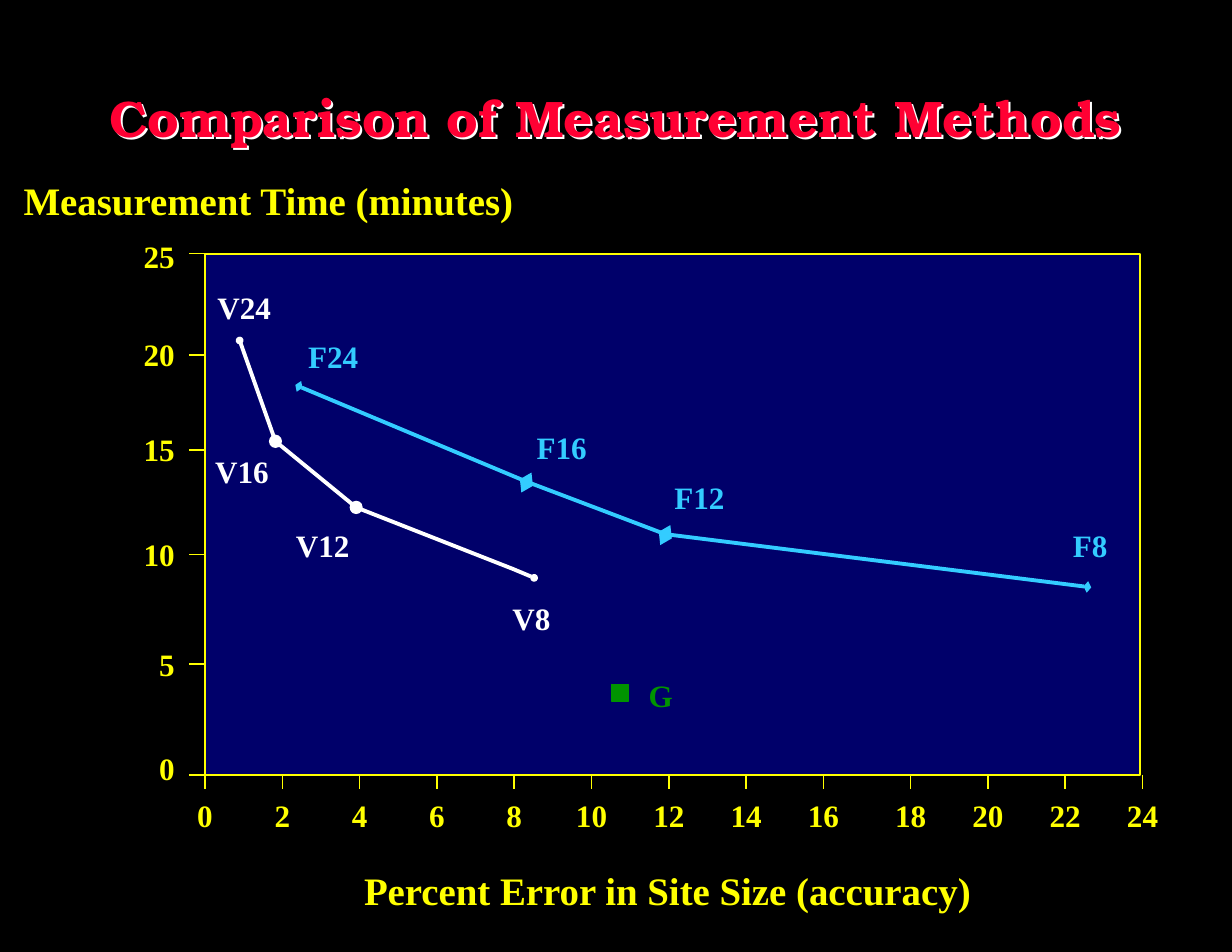
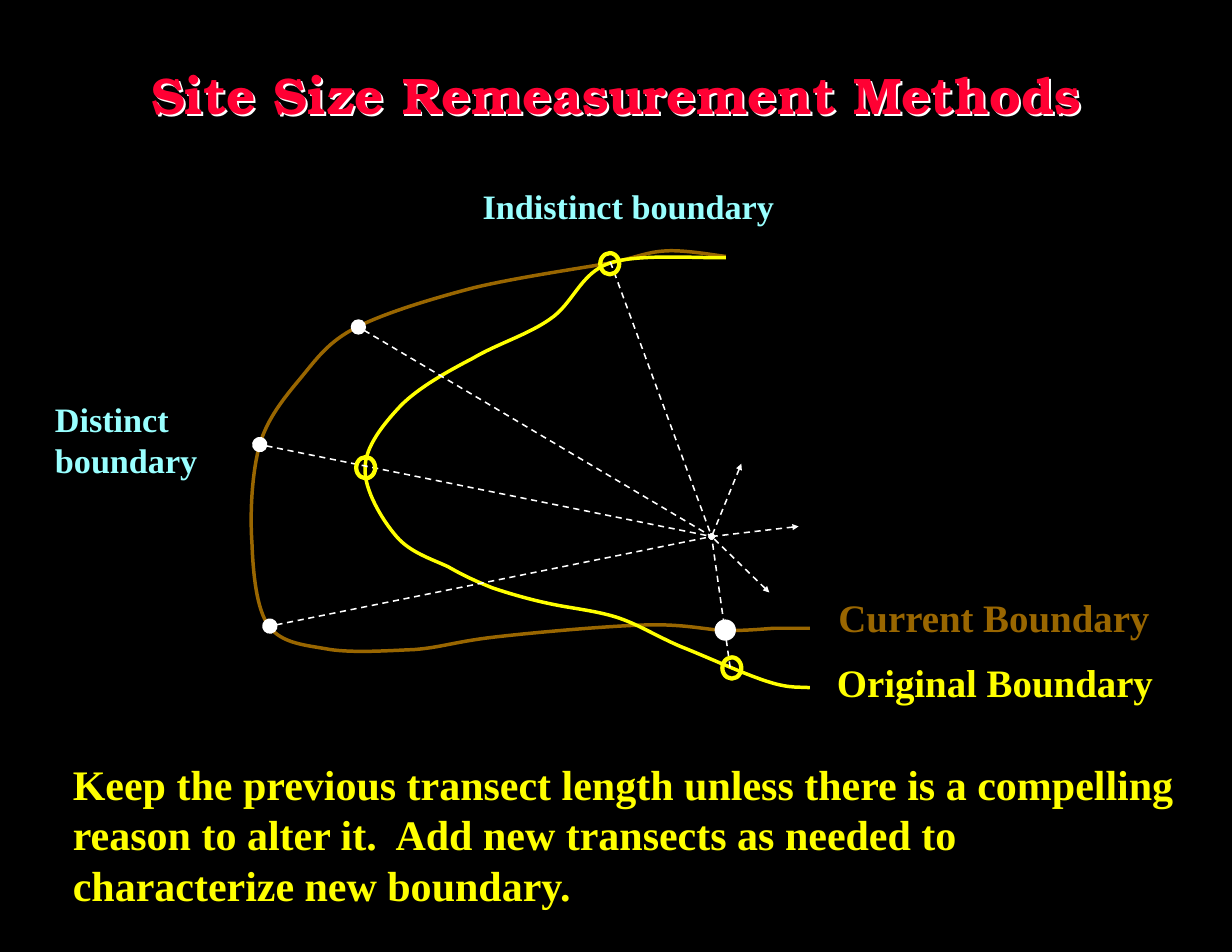
from lxml import etree
from pptx import Presentation
from pptx.dml.color import RGBColor
from pptx.enum.dml import MSO_LINE
from pptx.enum.shapes import MSO_CONNECTOR, MSO_SHAPE
from pptx.enum.text import MSO_ANCHOR, MSO_AUTO_SIZE, PP_ALIGN
from pptx.oxml.ns import qn
from pptx.util import Pt

LEFT, CENTER = PP_ALIGN.LEFT, PP_ALIGN.CENTER
TOP, MIDDLE = MSO_ANCHOR.TOP, MSO_ANCHOR.MIDDLE
GROW, FIXED = MSO_AUTO_SIZE.SHAPE_TO_FIT_TEXT, MSO_AUTO_SIZE.NONE
OVAL, RECT, DIAMOND = MSO_SHAPE.OVAL, MSO_SHAPE.RECTANGLE, MSO_SHAPE.DIAMOND
STRAIGHT, DASH = MSO_CONNECTOR.STRAIGHT, MSO_LINE.DASH

COLORS = {
    "back": "000000", "title": "FF0033", "yellow": "FFFF00", "plot": "00006A",
    "white": "FFFFFF", "sky": "33CCFF", "green": "009300", "brown": "996600",
    "aqua": "99FFFF",
}
BODY = {"name": "Times New Roman", "bold": True}
HEAD = {"name": "TeX Gyre Bonum", "bold": True}
INSETS = {"margin_left": Pt(7.9), "margin_right": Pt(7.9),
          "margin_top": Pt(4.3), "margin_bottom": Pt(4.3)}


def rgb(name):
    return RGBColor.from_string(COLORS[name])


# ---- Shared parts ----
def add_text(slide, text, box, size, color, align=CENTER, wrap=False,
             anchor=TOP, font=BODY):
    sp = slide.shapes.add_textbox(*map(Pt, box))
    tf = sp.text_frame
    tf.text = text
    frame = {**INSETS, "word_wrap": wrap, "vertical_anchor": anchor,
             "auto_size": FIXED if anchor == MIDDLE else GROW}
    for key, value in frame.items():
        setattr(tf, key, value)
    for p in tf.paragraphs:
        p.alignment = align
        for r in p.runs:
            for key, value in {**font, "size": Pt(size)}.items():
                setattr(r.font, key, value)
            r.font.color.rgb = rgb(color)
    return sp


def add_title(slide, text, top):
    sp = add_text(slide, text, (39.6, top, 712.8, 95), 33, "title",
                  wrap=True, anchor=MIDDLE, font=HEAD)
    # The unfilled box casts the shadow of its text
    effects = etree.SubElement(sp._element.spPr, qn("a:effectLst"))
    shadow = etree.SubElement(effects, qn("a:outerShdw"), dist=str(Pt(1.8)),
                              dir="2700000", algn="ctr", rotWithShape="0")
    etree.SubElement(shadow, qn("a:srgbClr"), val=COLORS["white"])


def add_shape(slide, kind, box, fill=None, line=None, width=1, rotation=0):
    sp = slide.shapes.add_shape(kind, *map(Pt, box))
    sp.shadow.inherit = False
    sp.rotation = rotation
    if fill:
        sp.fill.solid()
        sp.fill.fore_color.rgb = rgb(fill)
    else:
        sp.fill.background()
    if line:
        style_line(sp, line, width)
    else:
        sp.line.fill.background()


def style_line(sp, color, width, head=None, tail=None):
    """Head and tail are (type, width, length)."""
    sp.line.color.rgb = rgb(color)
    sp.line.width = Pt(width)
    ln = sp.line._get_or_add_ln()
    for tag, end in (("a:headEnd", head), ("a:tailEnd", tail)):
        if end:
            etree.SubElement(ln, qn(tag), type=end[0], w=end[1], len=end[2])


def add_line(slide, start, end, color, dash=False, head=None, tail=None):
    sp = slide.shapes.add_connector(STRAIGHT, *map(Pt, (*start, *end)))
    if dash:
        sp.line.dash_style = DASH
    style_line(sp, color, 1, head, tail)
    etree.SubElement(sp._element.spPr, qn("a:effectLst"))


def add_outline(slide, points, origin, color, width, end=None, curved=False):
    """Open outline; if curved, each three points after the first make a Bezier."""
    pts = [(Pt(origin[0] + x), Pt(origin[1] + y)) for x, y in points]
    builder = slide.shapes.build_freeform(*pts[0])
    builder.add_line_segments(pts[1:], close=False)
    sp = builder.convert_to_shape()
    sp.shadow.inherit = False
    sp.fill.background()
    style_line(sp, color, width, end, end)
    if curved:
        segments = sp._element.xpath(".//a:lnTo")
        for i in range(0, len(segments), 3):
            curve = etree.Element(qn("a:cubicBezTo"))
            segments[i].addprevious(curve)
            for segment in segments[i:i + 3]:
                curve.append(segment[0])
                segment.getparent().remove(segment)


# ---- Slide 1: plot of time against error ----
PLOT = (131.8, 163.4, 601.2, 334.8)
# value, tick offset, label offset
Y_AXIS = [(25, -0.5, -15.1), (20, 64.8, 48.2), (15, 126, 108.7),
          (10, 193, 176.4), (5, 263.5, 247), (0, 334.8, 313.9)]
V_LINE = [(22.3, 55.5), (45.3, 120.3), (97.2, 162.8), (198, 202.4), (211.6, 208.1)]
F_LINE = [(60.4, 85), (206.6, 146.2), (295.9, 180), (567.3, 213.9)]
LABEL_WIDTH = 60
# text, centre, top, colour
POINT_LABELS = [
    ("F24", 82.4, 49, "sky"), ("F16", 229.3, 108, "sky"),
    ("F12", 317.8, 139.7, "sky"), ("F8", 569.1, 170.7, "sky"),
    ("V24", 25.2, 18, "white"), ("V16", 23.7, 123.2, "white"),
    ("V12", 75.6, 170.7, "white"), ("V8", 209.8, 217.5, "white"),
    ("G", 293, 267.2, "green"),
]


def draw_axes(slide, box):
    x, y, w, h = box
    add_shape(slide, RECT, box, "plot", "yellow", 1.25)
    for value, tick, top in Y_AXIS:
        add_line(slide, (x - 10, y + tick), (x, y + tick), "yellow")
        width = 16 + 10 * len(str(value))
        add_text(slide, str(value), (x - 11.5 - width, y + top, width, 31.7),
                 20, "yellow")
    for i in range(13):
        # The axis is slightly stretched between 16 and 18
        tick = x + 49.7 * i + (6.3 if i > 8 else 0)
        add_line(slide, (tick, y + h + 9), (tick, y + h), "yellow")
        add_text(slide, str(2 * i), (tick - 18, y + h + 9.5, 36, 31.7), 20, "yellow")


def draw_series(slide, box):
    x, y = box[:2]
    add_outline(slide, V_LINE, (x, y), "white", 2.5, ("oval", "sm", "sm"))
    for px, py in V_LINE[1:3]:
        add_shape(slide, OVAL, (x + px - 4.2, y + py - 4.3, 8.4, 8.6), "white")
    add_outline(slide, F_LINE, (x, y), "sky", 2.5, ("diamond", "med", "sm"))
    for px, py in F_LINE[1:3]:
        add_shape(slide, DIAMOND, (x + px - 4.7, y + py + 0.6 - 7.2, 9.4, 14.4),
                  "sky", rotation=26.9)
    add_shape(slide, RECT, (x + 261.3, y + 276.5, 10.8, 10.8), "green", "green", 0.75)
    for text, center, top, color in POINT_LABELS:
        add_text(slide, text, (x + center - LABEL_WIDTH / 2, y + top, LABEL_WIDTH, 31.7),
                 20, color)


def comparison_slide(slide):
    add_text(slide, "Measurement Time (minutes)", (5.8, 109.4, 333.4, 38.2), 25, "yellow")
    add_text(slide, "Percent Error in Site Size (accuracy)", (224.6, 553, 409, 38.2),
             25, "yellow")
    add_title(slide, "Comparison of Measurement Methods", 27.4)
    draw_axes(slide, PLOT)
    draw_series(slide, PLOT)


# ---- Slide 2: site boundaries and transects ----
SITE = (160, 160)
HUB = (297.5, 184.9)
CURRENT = [
    (306.6, 4.9), (300.1, 4.2), (280.6, 0.6), (268.4, 1.3),
    (255.4, 2), (251.8, 4.9), (231.7, 9.2), (210.8, 12.8), (171.2, 18.6), (144.6, 25),
    (117.2, 32.2), (88.4, 40.9), (69.7, 50.2), (51, 59.6), (43.8, 70.4), (33, 83.4),
    (22.9, 95.6), (12.1, 108.6), (7, 125.8), (2, 143.8), (0.6, 169.8), (2, 189.2),
    (2.7, 208.6), (4.9, 231.7), (12.8, 242.5), (21.4, 254), (36.6, 254.7), (52.4, 257.6),
    (68.2, 259.8), (89.1, 258.3), (106.4, 257.6), (123.7, 256.2), (132.3, 252.6),
    (156.8, 249.7), (181.3, 246.8), (229.5, 242.5), (254, 241.8), (279.2, 241),
    (292.2, 244.6), (305.8, 245.4), (319.5, 245.4), (328.2, 244.6), (337.5, 243.9),
    (346.9, 243.9), (355.5, 243.9), (360.6, 243.9),
]
ORIGINAL = [
    (306.6, 5.6), (293.6, 6.3), (250.4, 2.7), (231.7, 9.2),
    (213, 15.7), (208.6, 35.1), (193.5, 45.2), (179.1, 55.3), (159.7, 61), (143.8, 70.4),
    (127.3, 79), (109.3, 89.1), (97.8, 100.6), (86.2, 112.9), (74.7, 127.3), (74.7, 141),
    (74, 154.6), (85.5, 174.1), (94.9, 184.9), (103.5, 195), (117.2, 199.3), (128, 204.3),
    (138.1, 210.1), (146, 213.7), (156.8, 218), (167.6, 221.6), (179.8, 225.2),
    (193.5, 228.1), (206.5, 231), (222.3, 232.4), (236, 236.7), (249.7, 241),
    (260.5, 248.2), (277, 255.4), (293.6, 261.9), (320.2, 274.2), (334.6, 278.5),
    (348.3, 282.8), (354.8, 281.4), (360.6, 282.1),
]
DOT, HUB_DOT = ("oval", "lg", "lg"), ("oval", "sm", "sm")
ARROW = ("triangle", "sm", "sm")
# outer end, marker there, marker at the hub
TRANSECTS = [
    ((70.4, 50.2), DOT, HUB_DOT), ((7, 125.8), DOT, HUB_DOT),
    ((13.5, 242.5), DOT, HUB_DOT), ((316.6, 138.1), ARROW, None),
    ((353.4, 178.4), ARROW, None), ((334.6, 220.9), ARROW, None),
    ((309.4, 269.1), None, HUB_DOT), ((232.4, 8.5), None, HUB_DOT),
]
RINGS = [(69, 133.8), (225.9, 2.7), (304.4, 262.6)]


def draw_site(slide, origin):
    x, y = origin
    add_outline(slide, CURRENT, origin, "brown", 2.25, curved=True)
    add_outline(slide, ORIGINAL, origin, "yellow", 2.25, curved=True)
    for (px, py), head, tail in TRANSECTS:
        add_line(slide, (x + px, y + py), (x + HUB[0], y + HUB[1]), "white",
                 True, head, tail)
    for px, py in RINGS:
        add_shape(slide, OVAL, (x + px, y + py, 12.2, 13.7), None, "yellow", 2.75)
    add_shape(slide, OVAL, (x + 299.4, y + 238.2, 13.7, 13.7), "white")
    # Labels
    add_text(slide, "Current Boundary", (x + 370.6, y + 217.3, 216.7, 38.2), 25, "brown")
    add_text(slide, "Original Boundary", (x + 364.6, y + 259, 230, 38.2), 25, "yellow")
    add_text(slide, "Indistinct boundary", (x + 142.4, y - 45.5, 205, 34.6),
             22, "aqua", LEFT)
    add_text(slide, "Distinct\nboundary", (x - 132.6, y + 92, 110, 60.5),
             22, "aqua", LEFT)


def remeasurement_slide(slide):
    add_title(slide, "Site Size Remeasurement Methods", 13)
    draw_site(slide, SITE)
    add_text(slide, "Keep the previous transect length unless there is a compelling "
             "reason to alter it.  Add new transects as needed to characterize "
             "new boundary.", (38.9, 483.1, 733, 105.1), 27, "yellow", LEFT, True)


def main():
    prs = Presentation()
    prs.slide_width, prs.slide_height = Pt(792), Pt(612)
    back = prs.slide_master.background.fill
    back.solid()
    back.fore_color.rgb = rgb("back")
    for build in (comparison_slide, remeasurement_slide):
        build(prs.slides.add_slide(prs.slide_layouts[6]))
    prs.save("out.pptx")


if __name__ == "__main__":
    main()
